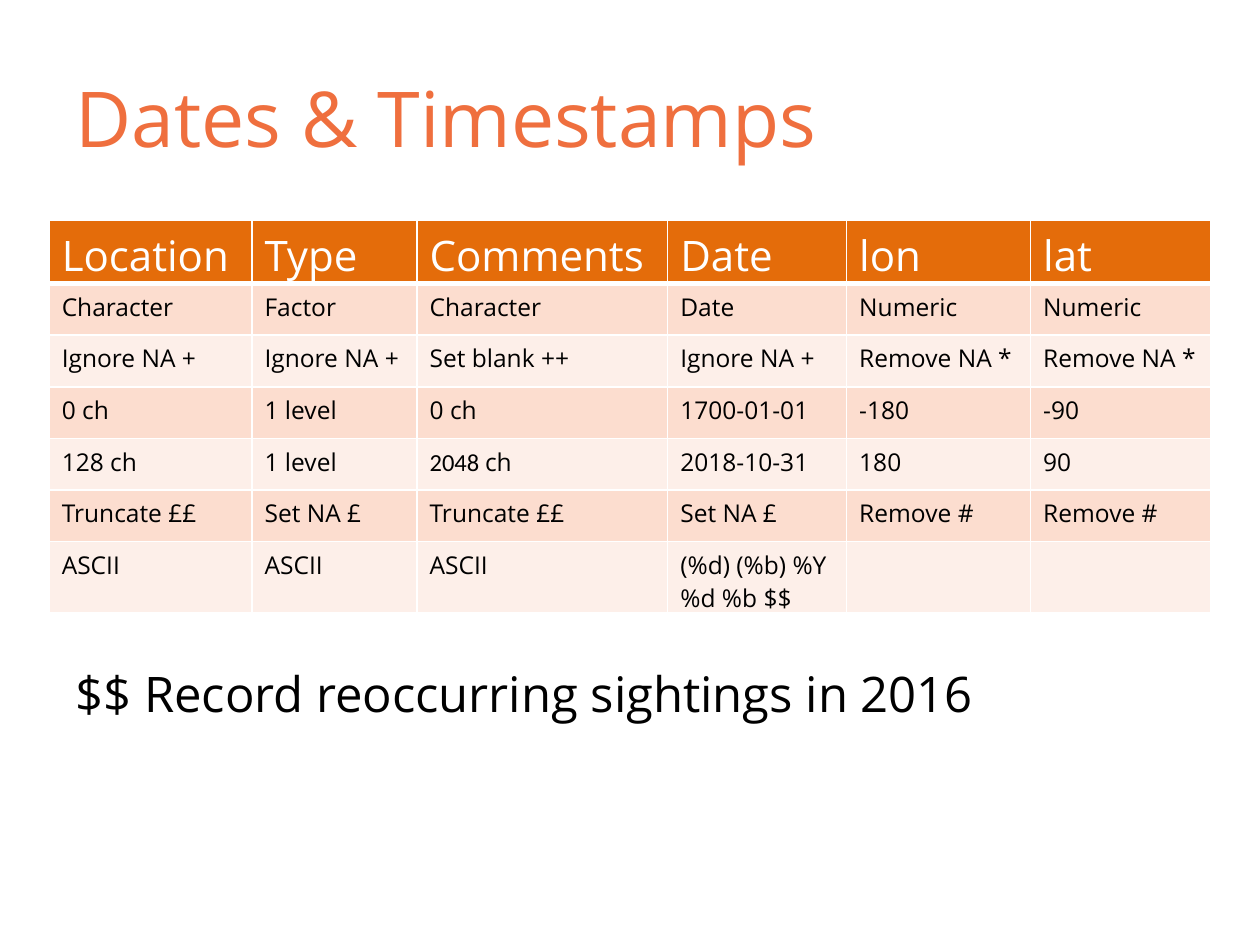
from lxml import etree
from pptx import Presentation
from pptx.dml.color import RGBColor
from pptx.enum.text import MSO_ANCHOR
from pptx.oxml.ns import qn
from pptx.util import Inches, Pt

MIDDLE = MSO_ANCHOR.MIDDLE
TOP = MSO_ANCHOR.TOP

COLORS = {
    "title": "EF6F3E",
    "header": "E46C0A",
    "odd_row": "FCDDCF",
    "even_row": "FDEFE9",
    "white": "FFFFFF",
    "black": "000000",
}
FONT = "Open Sans"
NUMBER_FONT = "Calibri"

COLUMN_WIDTHS = [1.61, 1.31, 1.99, 1.42, 1.46, 1.43]
ROW_HEIGHT = 0.41
ROWS = [
    ["Location", "Type", "Comments", "Date", "lon", "lat"],
    ["Character", "Factor", "Character", "Date", "Numeric", "Numeric"],
    ["Ignore NA +", "Ignore NA +", "Set blank ++", "Ignore NA +", "Remove NA *", "Remove NA *"],
    ["0 ch", "1 level", "0 ch", "1700-01-01", "-180", "-90"],
    ["128 ch", "1 level", [("2048 ", NUMBER_FONT), ("ch", FONT)], "2018-10-31", "180", "90"],
    ["Truncate ££", "Set NA £", "Truncate ££", "Set NA £", "Remove #", "Remove #"],
    ["ASCII", "ASCII", "ASCII", "(%d) (%b) %Y\n%d %b $$", "", ""],
]


def add_span(para, text, size, color, font=FONT):
    span = para.add_run()
    span.text = text
    span.font.name = font
    span.font.size = Pt(size)
    span.font.color.rgb = RGBColor.from_string(COLORS[color])


def add_text(page, text, left, top, width, height, size, color, anchor=TOP):
    box = page.shapes.add_textbox(Inches(left), Inches(top), Inches(width), Inches(height))
    frame = box.text_frame
    frame.word_wrap = True
    frame.vertical_anchor = anchor
    add_span(frame.paragraphs[0], text, size, color)


def set_borders(cell, bottom_width):
    properties = cell._tc.get_or_add_tcPr()
    widths = {"a:lnL": 1, "a:lnR": 1, "a:lnT": 1, "a:lnB": bottom_width}
    for tag, width in widths.items():
        line = etree.SubElement(properties, qn(tag), w=str(Pt(width)))
        fill = etree.SubElement(line, qn("a:solidFill"))
        etree.SubElement(fill, qn("a:srgbClr"), val=COLORS["white"])


def fill_cell(cell, content, size, text_color, fill_color, bottom_width):
    set_borders(cell, bottom_width)
    cell.fill.solid()
    cell.fill.fore_color.rgb = RGBColor.from_string(COLORS[fill_color])
    if not content:
        return
    # Content is plain text with line breaks, or one line of (text, font) spans
    if isinstance(content, str):
        lines = [[(line, FONT)] for line in content.split("\n")]
    else:
        lines = [content]
    frame = cell.text_frame
    for index, spans in enumerate(lines):
        para = frame.add_paragraph() if index else frame.paragraphs[0]
        for text, font in spans:
            add_span(para, text, size, text_color, font)


def add_rules_table(page, left, top):
    frame = page.shapes.add_table(
        len(ROWS), len(COLUMN_WIDTHS), Inches(left), Inches(top),
        Inches(sum(COLUMN_WIDTHS)), Inches(ROW_HEIGHT * len(ROWS)),
    )
    table = frame.table
    for column, width in zip(table.columns, COLUMN_WIDTHS):
        column.width = Inches(width)
    for row_index, contents in enumerate(ROWS):
        table.rows[row_index].height = Inches(ROW_HEIGHT)
        if row_index == 0:
            style = (24, "white", "header", 3)
        else:
            style = (14, "black", "odd_row" if row_index % 2 else "even_row", 1)
        for column_index, content in enumerate(contents):
            fill_cell(table.cell(row_index, column_index), content, *style)


def main():
    deck = Presentation()
    deck.slide_width = Inches(10)
    deck.slide_height = Inches(7.5)
    page = deck.slides.add_slide(deck.slide_layouts[6])

    # Title
    add_text(page, "Dates & Timestamps", 0.5, 0.3, 9, 1.25, 44, "title", MIDDLE)
    # Cleaning rules for each field
    add_rules_table(page, 0.39, 1.75)
    # Footnote
    add_text(page, "$$ Record reoccurring sightings in 2016", 0.5, 5.22, 8.38, 1.33, 28, "black")

    deck.save("out.pptx")


if __name__ == "__main__":
    main()
